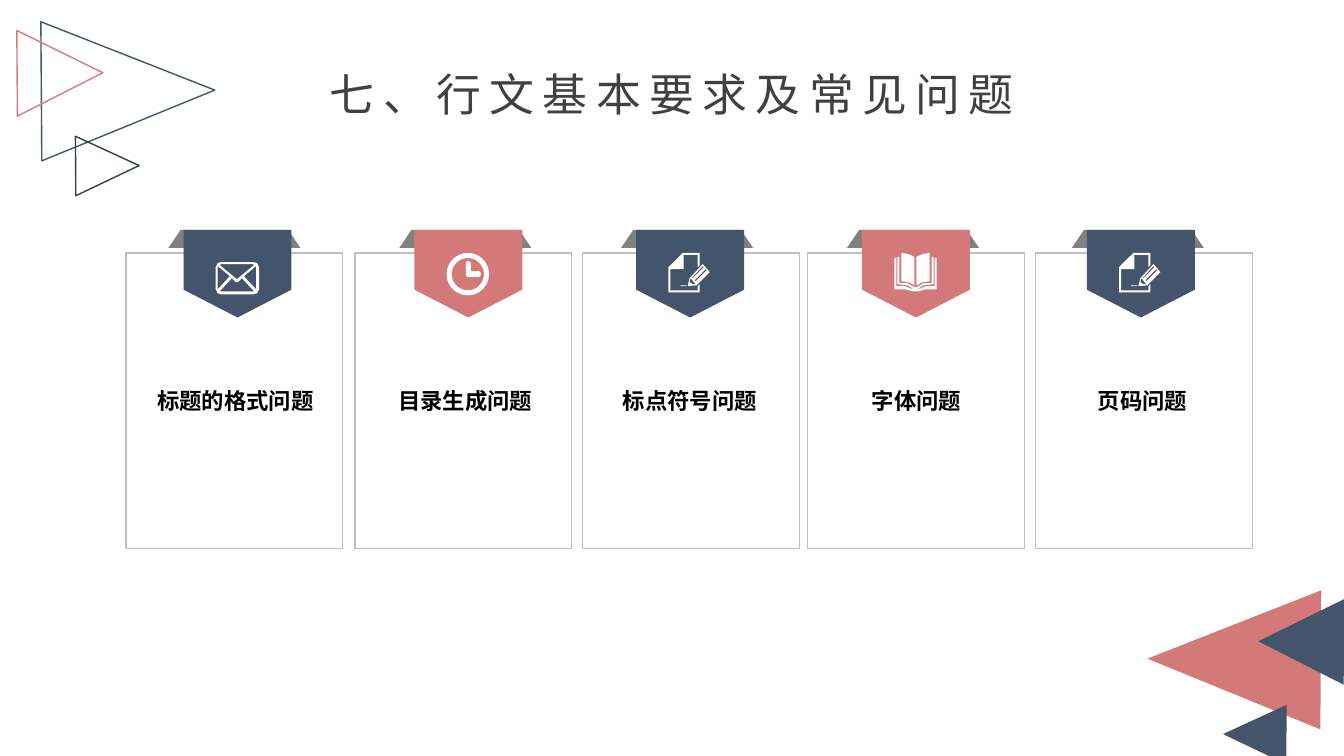
import math

import pptx
import pptx.dml.color
import pptx.enum.shapes
import pptx.enum.text
import pptx.oxml.ns
import pptx.util
from lxml import etree

Inches = pptx.util.Inches
Preset = pptx.enum.shapes.MSO_SHAPE
Align = pptx.enum.text.PP_ALIGN
Anchor = pptx.enum.text.MSO_ANCHOR

NAVY, ROSE, WHITE = "44546A", "D37979", "FFFFFF"


def color(value):
    return pptx.dml.color.RGBColor.from_string(value)


def circle(center, radius, steps=48):
    angles = [2 * math.pi * step / steps for step in range(steps)]
    return [(center + radius * math.cos(a), center + radius * math.sin(a)) for a in angles]


def mirror(points, width):
    """Reflect points left to right and reverse their order."""
    return [(width - x, y) for x, y in reversed(points)]


# Each icon is a list of outlines in inches from its top left corner.
ENVELOPE = [
    [(.05, 0), (.37, 0), (.41, .01), (.43, .05), (.43, .27), (.41, .31),
     (.37, .32), (.05, .32), (.02, .31), (0, .27), (0, .05), (.02, .01)],
    [(.28, .14), (.40, .04), (.40, .27)],
    [(.37, .02), (.38, .03), (.21, .17), (.04, .03), (.05, .02)],
    [(.02, .27), (.02, .04), (.14, .14)],
    [(.05, .29), (.04, .29), (.16, .16), (.20, .20), (.22, .20), (.26, .16), (.38, .29)],
]
CLOCK = [
    circle(.21, .21),
    circle(.21, .16),
    [(.19, .10), (.20, .08), (.22, .08), (.24, .10), (.24, .18), (.32, .18),
     (.34, .20), (.34, .22), (.32, .24), (.21, .24), (.19, .22)],
]
NOTE = [
    [(.12, .32), (.18, .32), (.18, .33), (.12, .33)],
    [(.28, .32), (.19, .33), (.21, .25), (.34, .11), (.41, .19)],
    [(.27, .28), (.38, .17), (.37, .16), (.26, .27)],
    [(.27, .31), (.24, .31), (.21, .29), (.22, .25)],
    [(.24, .25), (.35, .14), (.34, .13), (.23, .25)],
    [(0, .39), (.31, .39), (.31, .31), (.29, .33), (.29, .37), (.02, .37),
     (.02, .16), (.15, .16), (.15, .02), (.29, .02), (.29, .14), (.31, .12),
     (.31, 0), (.14, 0), (0, .14)],
]
LEFT_PAGE = [(.20, .32), (.14, .29), (.07, .28), (.07, 0), (.14, .01), (.20, .04)]
LEFT_COVER = [
    (.18, .38), (.11, .36), (0, .36), (0, .05), (.02, .05), (.02, .33), (.11, .33),
    (.18, .36), (.18, .35), (.13, .32), (.03, .31), (.03, .04), (.05, .04),
    (.05, .30), (.13, .30), (.20, .34), (.21, .34),
]
BOOK = [LEFT_PAGE, mirror(LEFT_PAGE, .42), LEFT_COVER + mirror(LEFT_COVER, .42)]


class SlideBuilder:
    font = "Noto Sans CJK JP"

    def __init__(self, slide):
        self.slide = slide

    def paint(self, shape, fill=None, line=None):
        shape.shadow.inherit = False
        if fill:
            shape.fill.solid()
            shape.fill.fore_color.rgb = color(fill)
        else:
            shape.fill.background()
        if line:
            shape.line.color.rgb = color(line)
            shape.line.width = pptx.util.Pt(1)
        else:
            shape.line.fill.background()

    def shape(self, preset, box, fill=None, line=None, rotation=0, adjust=None):
        shape = self.slide.shapes.add_shape(preset, *map(Inches, box))
        shape.rotation = rotation
        if adjust is not None:
            shape.adjustments[0] = adjust
        self.paint(shape, fill, line)

    def icon(self, outlines, left, top):
        placed = [[(Inches(left + x), Inches(top + y)) for x, y in outline]
                  for outline in outlines]
        builder = self.slide.shapes.build_freeform(*placed[0][0], scale=1.0)
        for index, outline in enumerate(placed):
            if index:
                builder.move_to(*outline[0])
            builder.add_line_segments(outline[1:], close=True)
        self.paint(builder.convert_to_shape(), WHITE)

    def text(self, words, box, size, ink, bold=False):
        text_box = self.slide.shapes.add_textbox(*map(Inches, box))
        frame = text_box.text_frame
        frame.text = words
        frame.word_wrap = True
        frame.auto_size = pptx.enum.text.MSO_AUTO_SIZE.SHAPE_TO_FIT_TEXT
        font = frame.paragraphs[0].runs[0].font
        font.name, font.size, font.bold = self.font, pptx.util.Pt(size), bold
        font.color.rgb = color(ink)
        properties = frame.paragraphs[0].runs[0]._r.get_or_add_rPr()
        east_asian = etree.SubElement(properties, pptx.oxml.ns.qn("a:ea"))
        east_asian.set("typeface", self.font)
        return frame

    def title(self, words, box):
        frame = self.text(words, box, 32, "404040")
        frame.margin_left = frame.margin_right = frame.margin_top = frame.margin_bottom = 0
        frame.vertical_anchor = Anchor.MIDDLE
        paragraph = frame.paragraphs[0]
        paragraph.alignment = Align.CENTER
        paragraph.runs[0]._r.get_or_add_rPr().set("spc", "600")

    def card(self, left, ribbon_left, fill, icon, icon_top, label, label_left, label_width):
        self.shape(Preset.RECTANGLE, (left, 2.51, 2.15, 2.93), line="BFBFBF")
        self.shape(Preset.TRAPEZOID, (ribbon_left, 2.28, 1.31, .18), "808080", adjust=.679)
        self.shape(Preset.PENTAGON, (ribbon_left + .25, 2.18, .87, 1.07), fill,
                   rotation=90, adjust=.317)
        self.icon(icon, ribbon_left + .47, icon_top)
        self.text(label, (label_left, 3.79, label_width, .37), 16, "000000", bold=True)


CARDS = [
    (1.25, 1.67, NAVY, ENVELOPE, 2.6, "标题的格式问题", 1.46, 1.79),
    (3.52, 3.96, ROSE, CLOCK, 2.51, "目录生成问题", 3.85, 1.59),
    (5.78, 6.16, NAVY, NOTE, 2.51, "标点符号问题", 6.08, 1.55),
    (8.01, 8.4, ROSE, BOOK, 2.51, "字体问题", 8.55, 1.15),
    (10.27, 10.63, NAVY, NOTE, 2.51, "页码问题", 10.79, 1.11),
]
CORNER_TRIANGLES = [
    ((11.55, 5.68, 1.38, 1.72), ROSE, None, 270.4),
    ((12.15, 6.97, .59, .63), NAVY, None, 270.4),
    ((12.48, 5.94, .85, .85), NAVY, None, 270.4),
    ((.58, .04, 1.38, 1.72), None, NAVY, 89.6),
    ((.77, 1.33, .59, .63), None, "333F50", 89.6),
    ((.17, .3, .85, .85), None, "DD7979", 89.6),
]


def main():
    presentation = pptx.Presentation()
    presentation.slide_width, presentation.slide_height = Inches(13.33), Inches(7.5)
    builder = SlideBuilder(presentation.slides.add_slide(presentation.slide_layouts[6]))
    for card in CARDS:
        builder.card(*card)
    for box, fill, line, rotation in CORNER_TRIANGLES:
        builder.shape(Preset.ISOSCELES_TRIANGLE, box, fill, line, rotation)
    builder.title("七、行文基本要求及常见问题", (3.13, .66, 7.07, .54))
    presentation.save("out.pptx")


if __name__ == "__main__":
    main()
